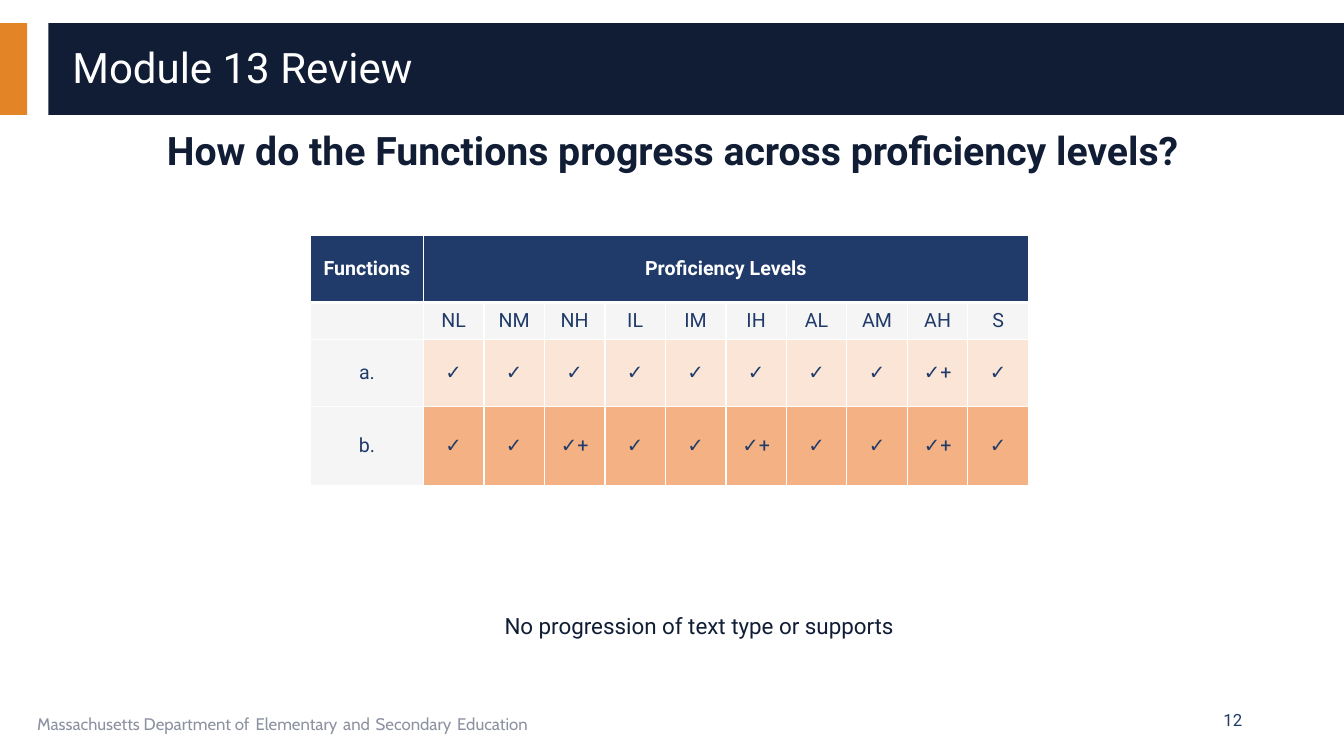
from dataclasses import dataclass

from lxml import etree
from pptx import Presentation
from pptx import util as u
from pptx.dml.color import RGBColor
from pptx.enum import shapes, text
from pptx.oxml.ns import qn


@dataclass(frozen=True)
class Theme:
    font: str = "Roboto"
    foot: str = "Cabin"
    navy: str = "101D35"
    blue: str = "203B6A"
    orange: str = "E38526"
    white: str = "FFFFFF"
    grey: str = "8D92A1"
    pale: str = "F5F5F5"
    peach: str = "FBE5D6"
    apricot: str = "F4B183"
    title: int = 30
    head: int = 28
    gap: int = 18
    note: int = 16
    cell: int = 14
    small: int = 12


T = Theme()
LEFT, MID, RIGHT = text.PP_ALIGN.LEFT, text.PP_ALIGN.CENTER, text.PP_ALIGN.RIGHT
TOP, CENTER = text.MSO_ANCHOR.TOP, text.MSO_ANCHOR.MIDDLE


def px(n):
    return u.Emu(n * 9144)


def style(font, size, color, bold=False, name=T.font):
    font.name = name
    font.size = u.Pt(size)
    font.bold = bold
    font.color.rgb = RGBColor.from_string(color)


def bar(slide, box, color):
    shape = slide.shapes.add_shape(shapes.MSO_SHAPE.RECTANGLE, *map(px, box))
    shape.shadow.inherit = False
    shape.fill.solid()
    shape.fill.fore_color.rgb = RGBColor.from_string(color)
    shape.line.fill.background()


def frame(slide, box, align, anchor, space=0.9):
    body = slide.shapes.add_textbox(*map(px, box)).text_frame
    body.word_wrap = True
    body.vertical_anchor = anchor
    para = body.paragraphs[0]
    para.alignment = align
    para.line_spacing = space
    return para


def label(slide, box, words, size, color, align=MID, anchor=TOP, bold=False):
    para = frame(slide, box, align, anchor)
    para.text = words
    style(para.font, size, color, bold)


def footer(slide, box, parts):
    para = frame(slide, box, LEFT, CENTER, 1.0)
    for i, part in enumerate(parts):
        if i:
            gap = para.add_run()
            gap.text = " "
            style(gap.font, T.gap, T.blue, name=T.foot)
        run = para.add_run()
        run.text = part
        style(run.font, T.small, T.grey, name=T.foot)


def border(cell, base):
    props = cell._tc.get_or_add_tcPr()
    for side, width in (("L", 1), ("R", 1), ("T", 1), ("B", base)):
        line = etree.SubElement(props, qn(f"a:ln{side}"), w=str(u.Pt(width)))
        fill = etree.SubElement(line, qn("a:solidFill"))
        etree.SubElement(fill, qn("a:srgbClr"), val=T.white)


def paint(cell, words, fill, color, bold=False, base=1):
    border(cell, base)
    cell.fill.solid()
    cell.fill.fore_color.rgb = RGBColor.from_string(fill)
    cell.vertical_anchor = CENTER
    cell.margin_top = cell.margin_bottom = 0
    para = cell.text_frame.paragraphs[0]
    para.text = words
    para.alignment = MID
    style(para.font, T.cell, color, bold)


def grid(slide, spot, cols, rows, head, data):
    size = sum(cols), sum(rows)
    table = slide.shapes.add_table(
        len(rows), len(cols), *map(px, spot + size)).table
    table.first_row = table.horz_banding = False
    for col, width in zip(table.columns, cols):
        col.width = px(width)
    for row, height in zip(table.rows, rows):
        row.height = px(height)
    for c in range(len(cols)):
        words = head[c] if c < len(head) else ""
        paint(table.cell(0, c), words, T.blue, T.white, True, 3)
    table.cell(0, 1).merge(table.cell(0, len(cols) - 1))
    for r, (line, fill) in enumerate(data, 1):
        for c, words in enumerate(line):
            paint(table.cell(r, c), words, fill if c else T.pale, T.blue)


def marks(levels, plus):
    return ["✓+" if level in plus else "✓" for level in levels]


def main():
    deck = Presentation()
    deck.slide_width, deck.slide_height = px(1333), px(750)
    slide = deck.slides.add_slide(deck.slide_layouts[6])

    bar(slide, (0, 23, 27, 91), T.orange)
    bar(slide, (48, 23, 1285, 91), T.navy)
    footer(slide, (27, 695, 844, 40),
           ("Massachusetts Department of", "Elementary", "and",
            "Secondary", "Education"))
    label(slide, (942, 695, 300, 40), "12", T.small, T.blue, RIGHT, CENTER)
    label(slide, (62, 39, 1244, 60), "Module 13 Review",
          T.title, T.white, LEFT, CENTER)
    label(slide, (46, 126, 1242, 50),
          "How do the Functions progress across proficiency levels?",
          T.head, T.navy, bold=True)
    label(slide, (267, 605, 853, 54),
          "No progression of text type or supports", T.note, T.navy)

    levels = "NL NM NH IL IM IH AL AM AH S".split()
    grid(slide, (308, 234), [112] + [60] * len(levels) + [], [66, 37, 66, 79],
         ("Functions", "Proficiency Levels"),
         (([""] + levels, T.pale),
          (["a."] + marks(levels, {"AH"}), T.peach),
          (["b."] + marks(levels, {"NH", "IH", "AH"}), T.apricot)))

    deck.save("out.pptx")


if __name__ == "__main__":
    main()
